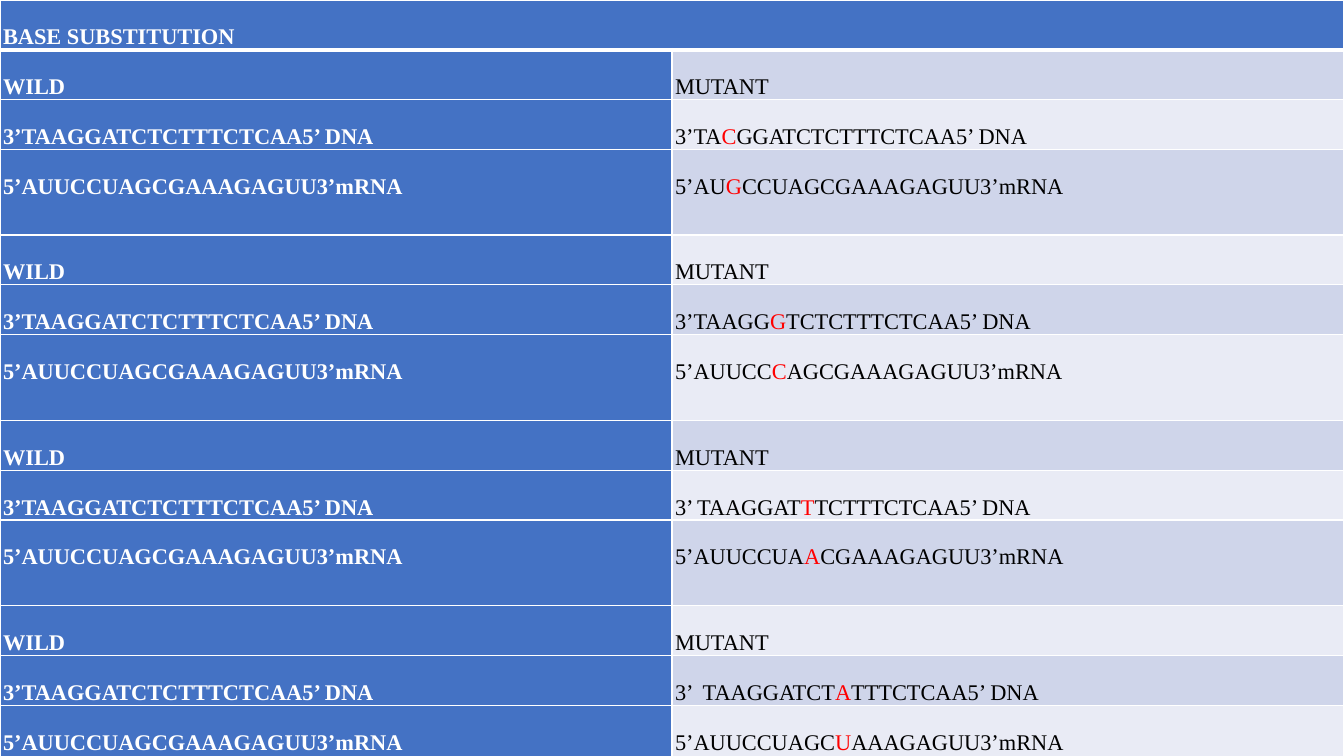
from typing import NamedTuple

from lxml import etree
from pptx import Presentation
from pptx.dml.color import RGBColor
from pptx.oxml.ns import qn
from pptx.util import Inches, Pt

SLIDE_WIDTH, SLIDE_HEIGHT = Inches(13.33), Inches(7.5)
BLANK_LAYOUT = 6
COLUMN_COUNT = 2
SHORT_ROW, TALL_ROW = Inches(0.44), Inches(0.85)

BLUE, WHITE, BLACK, RED = "4472C4", "FFFFFF", "000000", "FF0000"
BANDS = ("E9EBF5", "CFD5EA")
THIN, THICK = 1, 3
CELL_FORMAT = {
    "margin_left": Inches(0.03),
    "margin_right": Inches(0.03),
    "margin_top": 0,
    "margin_bottom": 0,
}
FONT_FORMAT = {"name": "Times New Roman", "size": Pt(16)}


class Strand(NamedTuple):
    """A strand of text; the changed base stands between two plain parts."""
    before: str
    changed: str = ""
    after: str = ""


class Line(NamedTuple):
    wild: Strand
    mutant: Strand
    height: int = SHORT_ROW


class Substitution(NamedTuple):
    dna: Strand
    rna: Strand


WILD_DNA = Strand("3’TAAGGATCTCTTTCTCAA5’ DNA")
WILD_RNA = Strand("5’AUUCCUAGCGAAAGAGUU3’mRNA")
SUBSTITUTIONS = (
    Substitution(Strand("3’TA", "C", "GGATCTCTTTCTCAA5’ DNA"),
                 Strand("5’AU", "G", "CCUAGCGAAAGAGUU3’mRNA")),
    Substitution(Strand("3’TAAGG", "G", "TCTCTTTCTCAA5’ DNA"),
                 Strand("5’AUUCC", "C", "AGCGAAAGAGUU3’mRNA")),
    Substitution(Strand("3’ TAAGGAT", "T", "TCTTTCTCAA5’ DNA"),
                 Strand("5’AUUCCUA", "A", "CGAAAGAGUU3’mRNA")),
    Substitution(Strand("3’  TAAGGATCT", "A", "TTTCTCAA5’ DNA"),
                 Strand("5’AUUCCUAGC", "U", "AAAGAGUU3’mRNA")),
)


def colour(value: str) -> RGBColor:
    return RGBColor.from_string(value)


def apply_format(target, values: dict) -> None:
    for name, value in values.items():
        setattr(target, name, value)


def add_borders(cell, top: int, bottom: int) -> None:
    properties = cell._tc.get_or_add_tcPr()
    widths = {"a:lnL": THIN, "a:lnR": THIN, "a:lnT": top, "a:lnB": bottom}
    for tag, width in widths.items():
        border = etree.SubElement(properties, qn(tag), w=str(Pt(width)))
        fill = etree.SubElement(border, qn("a:solidFill"))
        etree.SubElement(fill, qn("a:srgbClr"), val=WHITE)


def style_cell(cell, fill: str, top: int = THIN, bottom: int = THIN) -> None:
    apply_format(cell, CELL_FORMAT)
    add_borders(cell, top, bottom)
    cell.fill.solid()
    cell.fill.fore_color.rgb = colour(fill)


def write_strand(cell, strand: Strand, text_colour: str, bold: bool) -> None:
    para = cell.text_frame.paragraphs[0]
    para.line_spacing = 2.0
    for text, shade in zip(strand, (text_colour, RED, text_colour)):
        if text:
            span = para.add_run()
            span.text = text
            apply_format(span.font, FONT_FORMAT | {"bold": bold})
            span.font.color.rgb = colour(shade)


def list_lines() -> list[Line]:
    lines = []
    for change in SUBSTITUTIONS:
        lines += [
            Line(Strand("WILD"), Strand("MUTANT")),
            Line(WILD_DNA, change.dna),
            Line(WILD_RNA, change.rna, TALL_ROW),
        ]
    return lines


def draw_table(page) -> None:
    lines = list_lines()
    heights = [SHORT_ROW] + [line.height for line in lines]
    table = page.shapes.add_table(len(heights), COLUMN_COUNT, 0, 0,
                                  SLIDE_WIDTH, sum(heights)).table
    for row, height in zip(table.rows, heights):
        row.height = height

    # Heading across both columns
    for column in range(COLUMN_COUNT):
        style_cell(table.cell(0, column), BLUE, bottom=THICK)
    heading = table.cell(0, 0)
    heading.merge(table.cell(0, COLUMN_COUNT - 1))
    write_strand(heading, Strand("BASE SUBSTITUTION"), WHITE, True)

    # Wild strands on the left, mutant strands on the right
    for index, line in enumerate(lines, start=1):
        top = THICK if index == 1 else THIN
        wild, mutant = table.cell(index, 0), table.cell(index, 1)
        style_cell(wild, BLUE, top)
        write_strand(wild, line.wild, WHITE, True)
        style_cell(mutant, BANDS[index % len(BANDS)], top)
        write_strand(mutant, line.mutant, BLACK, False)


def main() -> None:
    deck = Presentation()
    deck.slide_width, deck.slide_height = SLIDE_WIDTH, SLIDE_HEIGHT
    page = deck.slides.add_slide(deck.slide_layouts[BLANK_LAYOUT])
    draw_table(page)
    deck.save("out.pptx")


if __name__ == "__main__":
    main()
